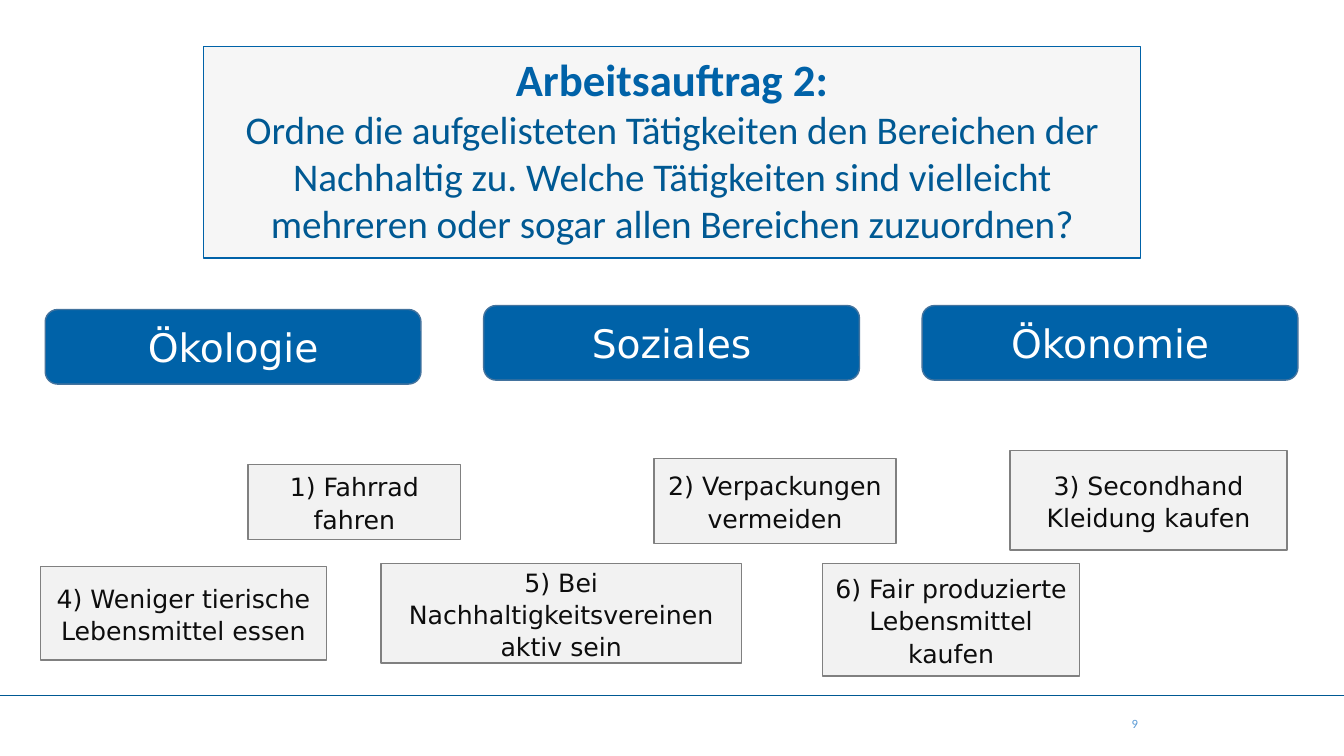
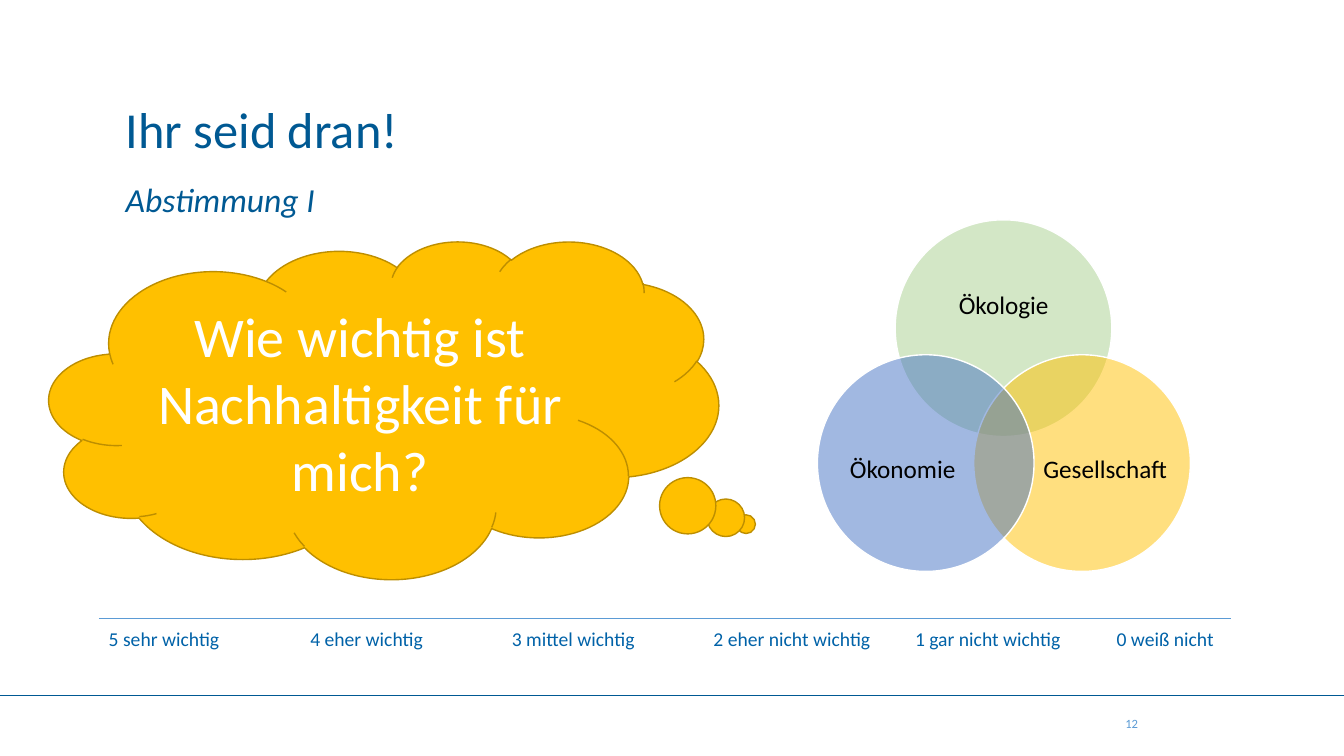
import pptx
import pptx.util
import pptx.dml.color
import pptx.enum.shapes
import pptx.enum.text
import lxml.etree
import pptx.oxml.ns

Cm, Pt = pptx.util.Cm, pptx.util.Pt
RGB = pptx.dml.color.RGBColor.from_string
KIND = pptx.enum.shapes.MSO_SHAPE
ALIGN = pptx.enum.text.PP_ALIGN
ANCHOR = pptx.enum.text.MSO_ANCHOR
qn = pptx.oxml.ns.qn

HUES = {
    "navy": "005993", "blue": "0062A8", "sky": "5B9BD5", "edge": "43739E",
    "pale": "F2F2F2", "gray": "808080", "ink": "0D0D0D", "black": "000000",
    "white": "FFFFFF", "gold": "FFC000", "ochre": "BD8E00",
    "green": "A9D18E", "royal": "4472C4",
}
SANS, WIDE = "Calibri", "DejaVu Sans"


def draw(shapes, kind, spot, fill, line, alpha=100):
    """Add a filled, outlined shape; spot is left, top, width, height in cm."""
    shape = shapes.add_shape(kind, *map(Cm, spot))
    shape.shadow.inherit = False
    shape.fill.solid()
    shape.fill.fore_color.rgb = RGB(HUES[fill])
    shape.line.color.rgb = RGB(HUES[line])
    shape.line.width = Pt(1)
    if alpha < 100:
        tint = shape.fill._xPr.find(".//" + qn("a:srgbClr"))
        lxml.etree.SubElement(tint, qn("a:alpha"), val=str(alpha * 1000))
    return shape


def write(shape, text, size, hue, face=SANS, align=ALIGN.CENTER, anchor=ANCHOR.MIDDLE):
    """Put one paragraph into a shape and return it."""
    frame = shape.text_frame
    frame.word_wrap = True
    frame.vertical_anchor = anchor
    para = frame.paragraphs[0]
    para.text = text
    para.alignment = align
    para.font.size = Pt(size)
    para.font.name = face
    para.font.color.rgb = RGB(HUES[hue])
    return para


deck = pptx.Presentation()
deck.slide_width, deck.slide_height = Cm(33.87), Cm(19.05)

# Both slides: footer rule and page number; second slide: scale rule
pages = []
for num in (9, 12):
    page = deck.slides.add_slide(deck.slide_layouts[6])
    pages.append(page.shapes)
    rules = [(0, 33.87, 17.52, "navy")]
    if num == 12:
        rules.append((2.49, 31.01, 15.58, "sky"))
    for left, right, top, hue in rules:
        rule = page.shapes.add_connector(
            pptx.enum.shapes.MSO_CONNECTOR.STRAIGHT, Cm(left), Cm(top), Cm(right), Cm(top))
        rule.line.color.rgb = RGB(HUES[hue])
        rule.line.width = Pt(0.5)
        lxml.etree.SubElement(rule._element.spPr, qn("a:effectLst"))
    foot = page.shapes.add_textbox(Cm(27.03), Cm(17.73), Cm(1.9), Cm(1.02))
    write(foot, str(num), 9, "sky", align=ALIGN.RIGHT)
task, vote = pages

# Slide 1: task box
head = draw(task, KIND.RECTANGLE, (5.13, 1.17, 23.62, 5.33), "pale", "blue", 63)
para = write(head, "", 28, "navy", anchor=ANCHOR.TOP)
lead = para.add_run()
lead.text = "Arbeitsauftrag 2:"
para.add_line_break()
body = para.add_run()
body.text = ("Ordne die aufgelisteten Tätigkeiten den Bereichen der Nachhaltig zu. "
             "Welche Tätigkeiten sind vielleicht mehreren oder sogar allen Bereichen zuzuordnen?")
for run, size, hue in ((lead, 32, "blue"), (body, 28, "navy")):
    run.font.size = Pt(size)
    run.font.name = SANS
    run.font.bold = run is lead
    run.font.color.rgb = RGB(HUES[hue])

# Slide 1: the three areas
for col, (name, top) in enumerate([("Ökologie", 7.8), ("Soziales", 7.7), ("Ökonomie", 7.7)]):
    area = draw(task, KIND.ROUNDED_RECTANGLE, (1.14 + col * 11.05, top, 9.47, 1.88), "blue", "edge")
    write(area, name, 28, "white", WIDE)

# Slide 1: numbered activity cards
cards = [
    ("Fahrrad fahren", (6.25, 11.71, 5.36, 1.88)),
    ("Verpackungen vermeiden", (16.48, 11.56, 6.1, 2.13)),
    ("Secondhand Kleidung kaufen", (25.45, 11.35, 6.99, 2.51)),
    ("Weniger tierische Lebensmittel essen", (1.02, 14.27, 7.21, 2.36)),
    ("Bei Nachhaltigkeitsvereinen aktiv sein", (9.6, 14.2, 9.09, 2.51)),
    ("Fair produzierte Lebensmittel kaufen", (20.73, 14.2, 6.48, 2.84)),
]
for num, (text, spot) in enumerate(cards, 1):
    card = draw(task, KIND.RECTANGLE, spot, "pale", "gray")
    para = write(card, f"{num}) {text}", 18, "ink", WIDE)
    para.line_spacing = 1.07

# Slide 2: title and subtitle
for text, top, size, anchor in (("Ihr seid dran!", 2.29, 36, ANCHOR.MIDDLE),
                                ("Abstimmung I", 4.39, 24, ANCHOR.TOP)):
    box = vote.add_textbox(Cm(2.92), Cm(top), Cm(23.88), Cm(1.9))
    para = write(box, text, size, "navy", align=ALIGN.LEFT, anchor=anchor)
para.font.italic = True

# Slide 2: question cloud
cloud = draw(vote, KIND.CLOUD_CALLOUT, (1.24, 6.07, 16.87, 8.51), "gold", "ochre")
cloud.adjustments[0], cloud.adjustments[1] = 0.541, 0.339
write(cloud, "Wie wichtig ist Nachhaltigkeit für mich?", 40, "white")

# Slide 2: three overlapping circles with labels
venn = vote.add_group_shape().shapes
rings = [
    ("Ökologie", "green", 22.56, 5.54, (23.29, 6.48, 4.01, 2.46)),
    ("Gesellschaft", "gold", 24.54, 8.94, (26.21, 10.36, 3.28, 3)),
    ("Ökonomie", "royal", 20.6, 8.94, (21.11, 10.36, 3.28, 3)),
]
for name, hue, left, top, spot in rings:
    draw(venn, KIND.OVAL, (left, top, 5.46, 5.46), hue, "white", 50)
    label = venn.add_textbox(*map(Cm, spot))
    frame = label.text_frame
    frame.margin_left = frame.margin_right = frame.margin_top = frame.margin_bottom = 0
    write(label, name, 18, "black").line_spacing = 0.9

# Slide 2: answer scale on evenly spaced tabs
marks = ["5 sehr wichtig", "4 eher wichtig", "3 mittel wichtig",
         "2 eher nicht wichtig", "1 gar nicht wichtig", "0 weiß nicht"]
scale = vote.add_textbox(Cm(2.49), Cm(15.67), Cm(28.5), Cm(0.86))
props = scale.text_frame.paragraphs[0]._p.get_or_add_pPr()
tabs = lxml.etree.SubElement(props, qn("a:tabLst"))
for step in range(1, len(marks)):
    lxml.etree.SubElement(tabs, qn("a:tab"), pos=str(Cm(5.08 * step)), algn="l")
write(scale, "\t".join(marks), 14, "blue", align=ALIGN.LEFT, anchor=ANCHOR.TOP)

deck.save("out.pptx")
